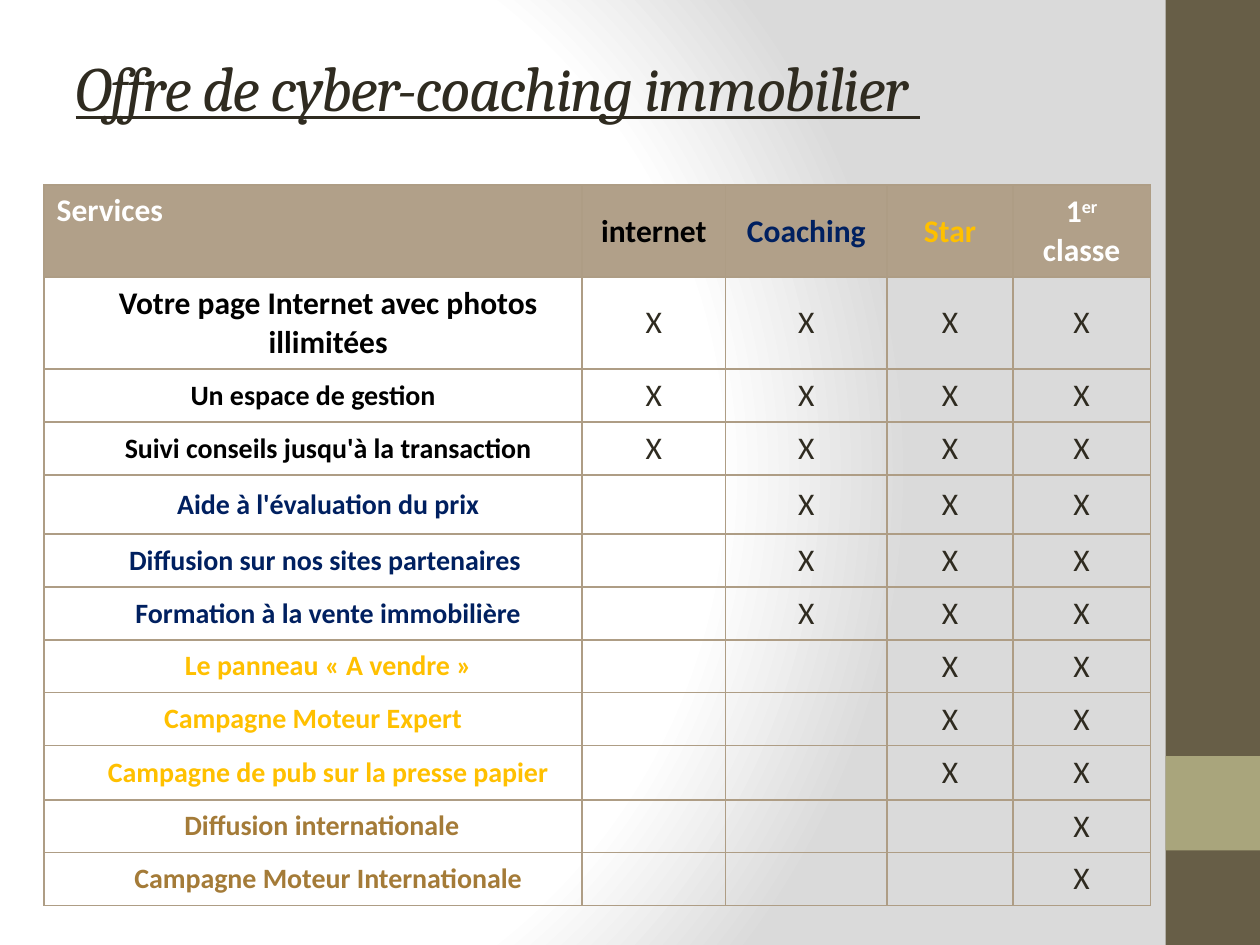
from lxml import etree
from pptx import Presentation
from pptx.dml import color
from pptx.enum import shapes, text
from pptx.oxml import parse_xml
from pptx.util import Inches, Pt

NS = "http://schemas.openxmlformats.org/drawingml/2006/main"
INK, BLACK, NAVY, GOLD, BROWN, WHITE = "2F2B20", "000000", "002060", "FFC000", "A47B38", "FFFFFF"
BORDER = "AE9D85"


def rgb(value):
    return color.RGBColor.from_string(value)


def add_run(p, words, hue, **formats):
    r = p.add_run()
    r.text = words
    r.font.color.rgb = rgb(hue)
    for name, value in formats.items():
        setattr(r.font, name, value)
    return r


prs = Presentation()
prs.slide_width, prs.slide_height = Inches(10), Inches(7.5)
slide = prs.slides.add_slide(prs.slide_layouts[5])

# Background: white fading to grey on the right
fill = slide.background.fill
fill.gradient()
grad = slide.background._cSld.bg.bgPr.find(f"{{{NS}}}gradFill")
stops = "".join(f'<a:gs pos="{pos}000"><a:srgbClr val="{hue}"/></a:gs>'
                for pos, hue in ((0, WHITE), (75, WHITE), (100, "DADADA")))
grad.getparent().replace(grad, parse_xml(
    f'<a:gradFill xmlns:a="{NS}" rotWithShape="1"><a:gsLst>{stops}</a:gsLst>'
    '<a:path path="circle"><a:fillToRect l="20000" t="50000" r="100000" b="50000"/></a:path>'
    '</a:gradFill>'))

# Side band
for top, height, hue in ((0, 7.5, "675E47"), (6, 0.75, "A9A57C")):
    sp = slide.shapes.add_shape(shapes.MSO_SHAPE.RECTANGLE, Inches(9.25), Inches(top),
                                Inches(0.75), Inches(height))
    sp.shadow.inherit = False
    sp.fill.solid()
    sp.fill.fore_color.rgb = rgb(hue)
    sp.line.fill.background()

# Title
title = slide.shapes.title
title.left, title.top, title.width, title.height = map(Inches, (0.5, 0.3, 9, 0.77))
tf = title.text_frame
tf.vertical_anchor = text.MSO_ANCHOR.MIDDLE
p = tf.paragraphs[0]
p.alignment = text.PP_ALIGN.LEFT
r = add_run(p, "Offre de cyber-coaching immobilier ", INK, name="Cambria", size=Pt(36),
            italic=True, underline=True)
r.font._element.set("spc", "-100")

# Table: service, colour, first offer that includes it, size, indented or not
headers = [("Services", WHITE), ("internet", BLACK), ("Coaching", NAVY), ("Star", GOLD),
           ("1", WHITE)]
services = [
    ("Votre page Internet avec photos illimitées", BLACK, 1, 18, True),
    ("Un espace de gestion", BLACK, 1, 16, False),
    ("Suivi conseils jusqu'à la transaction", BLACK, 1, 16, True),
    ("Aide à l'évaluation du prix", NAVY, 2, 16, True),
    ("Diffusion sur nos sites partenaires ", NAVY, 2, 16, True),
    ("Formation à la vente immobilière", NAVY, 2, 16, True),
    ("Le panneau «\u00a0A vendre »", GOLD, 3, 16, True),
    ("Campagne Moteur Expert", GOLD, 3, 16, False),
    ("Campagne de pub sur la presse papier", GOLD, 3, 16, True),
    ("Diffusion internationale  ", BROWN, 4, 16, True),
    ("Campagne Moteur Internationale", BROWN, 4, 16, True),
]
widths = [4.27, 1.14, 1.28, 1, 1.09]
heights = [0.73, 0.73, 0.42, 0.42, 0.47, 0.42, 0.42, 0.42, 0.42, 0.43, 0.42, 0.42]
table = slide.shapes.add_table(len(heights), len(widths), Inches(0.35), Inches(1.47),
                               Inches(sum(widths)), Inches(sum(heights))).table
for column, width in zip(table.columns, widths):
    column.width = Inches(width)
for row, height in zip(table.rows, heights):
    row.height = Inches(height)

# Header row
base = {"name": "Calibri", "size": Pt(18), "bold": True}
for col, (words, hue) in enumerate(headers):
    add_run(table.cell(0, col).text_frame.paragraphs[0], words, hue, **base)
p = table.cell(0, 4).text_frame.paragraphs[0]
add_run(p, "er", WHITE, **base).font._element.set("baseline", "30000")
add_run(p, " classe", WHITE, **base)

# Services and crosses
for row, (words, hue, first, size, indented) in enumerate(services, 1):
    p = table.cell(row, 0).text_frame.paragraphs[0]
    add_run(p, words, hue, **{**base, "size": Pt(size)})
    if indented:
        p._p.get_or_add_pPr().set("marL", str(Inches(0.24)))
    for col in range(first, len(widths)):
        add_run(table.cell(row, col).text_frame.paragraphs[0], "X", INK,
                **{**base, "bold": False})

# Cell alignment, borders and fills
for row in range(len(heights)):
    for col in range(len(widths)):
        cell = table.cell(row, col)
        if (row, col) != (0, 0):
            cell.vertical_anchor = text.MSO_ANCHOR.MIDDLE
            cell.text_frame.paragraphs[0].alignment = text.PP_ALIGN.CENTER
        tcPr = cell._tc.get_or_add_tcPr()
        for side in ("lnL", "lnR", "lnT", "lnB"):
            ln = etree.SubElement(tcPr, f"{{{NS}}}{side}", w=str(Pt(1)))
            solid = etree.SubElement(ln, f"{{{NS}}}solidFill")
            etree.SubElement(solid, f"{{{NS}}}srgbClr", val=BORDER)
        if row == 0:
            cell.fill.solid()
            cell.fill.fore_color.rgb = rgb("B1A089")
        else:
            cell.fill.background()

prs.save("out.pptx")
